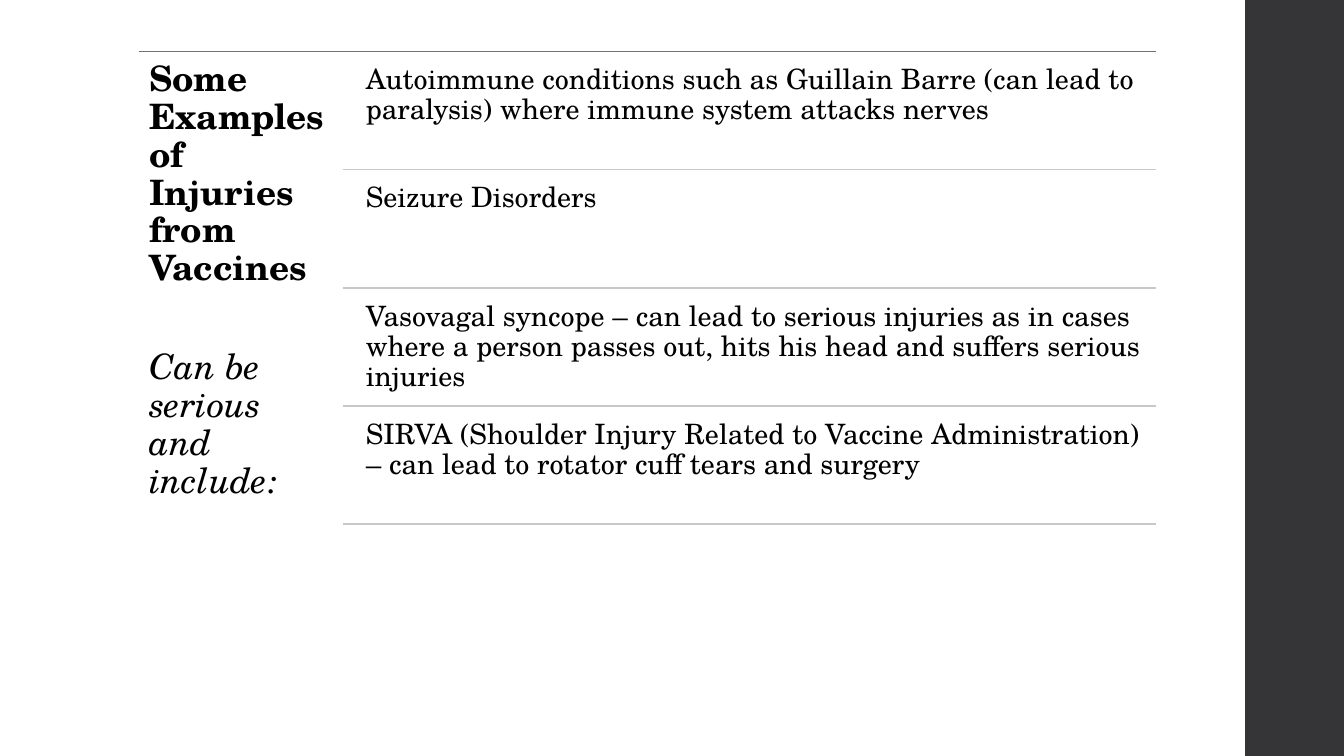
import pptx
import pptx.dml.color
import pptx.enum.shapes
import pptx.util
from lxml import etree

TITLE = "Some Examples of Injuries from Vaccines"
LEAD_IN = "Can be serious and include:"
INJURIES = [
    "Autoimmune conditions such as Guillain Barre (can lead to paralysis) "
    "where immune system attacks nerves",
    "Seizure Disorders",
    "Vasovagal syncope – can lead to serious injuries as in cases where a person "
    "passes out, hits his head and suffers serious injuries",
    "SIRVA (Shoulder Injury Related to Vaccine Administration) – can lead to "
    "rotator cuff tears and surgery",
]
COLORS = {"text": "000000", "band": "353537", "top_rule": "6F6F74", "row_rule": "C8C8C9"}
FONT = "TeX Gyre Schola"

WIDTH, HEIGHT = 13.33, 7.5
BAND_LEFT = 12.35
LEFT, RIGHT, TOP, BOTTOM = 1.38, 11.47, 0.51, 5.2
TITLE_WIDTH = (RIGHT - LEFT) / 5
RULE_LEFT = LEFT + TITLE_WIDTH
ITEM_LEFT = RULE_LEFT + 0.15
ROW = (BOTTOM - TOP) / len(INJURIES)
ROW_GAP = 0.06

Inches, Pt = pptx.util.Inches, pptx.util.Pt


def rgb(name):
    return pptx.dml.color.RGBColor.from_string(COLORS[name])


def add_rule(slide, left, y, color):
    line = slide.shapes.add_connector(
        pptx.enum.shapes.MSO_CONNECTOR.STRAIGHT,
        Inches(left), Inches(y), Inches(RIGHT), Inches(y))
    line.line.color.rgb = rgb(color)
    line.line.width = Pt(1.1)
    etree.SubElement(line._element.spPr, pptx.oxml.ns.qn("a:effectLst"))


def add_text(slide, box, texts, size, inset):
    """Add a wrapped text box with one paragraph per text and return its paragraphs."""
    tf = slide.shapes.add_textbox(*map(Inches, box)).text_frame
    tf.word_wrap = True
    tf.margin_left = tf.margin_right = tf.margin_top = tf.margin_bottom = Inches(inset)
    tf.text = "\n".join(texts)
    for p in tf.paragraphs:
        p.line_spacing = 0.9
        p.font.name = FONT
        p.font.size = Pt(size)
        p.font.color.rgb = rgb("text")
    return tf.paragraphs


def main():
    prs = pptx.Presentation()
    prs.slide_width, prs.slide_height = Inches(WIDTH), Inches(HEIGHT)
    slide = prs.slides.add_slide(prs.slide_layouts[6])

    band = slide.shapes.add_shape(
        pptx.enum.shapes.MSO_SHAPE.RECTANGLE,
        Inches(BAND_LEFT), 0, Inches(WIDTH - BAND_LEFT), Inches(HEIGHT))
    band.shadow.inherit = False
    band.fill.solid()
    band.fill.fore_color.rgb = rgb("band")
    band.line.fill.background()

    add_rule(slide, LEFT, TOP, "top_rule")
    title, lead_in = add_text(
        slide, (LEFT, TOP, TITLE_WIDTH, BOTTOM - TOP), [TITLE, LEAD_IN], 25, 0.1)
    title.font.bold = True
    title.space_after = Pt(44)
    lead_in.font.italic = True

    for i, injury in enumerate(INJURIES):
        top = TOP + i * ROW
        add_text(slide, (ITEM_LEFT, top + ROW_GAP, RIGHT - ITEM_LEFT, ROW - ROW_GAP),
                 [injury], 20, 0.08)
        add_rule(slide, RULE_LEFT, top + ROW, "row_rule")

    prs.save("out.pptx")


if __name__ == "__main__":
    main()
